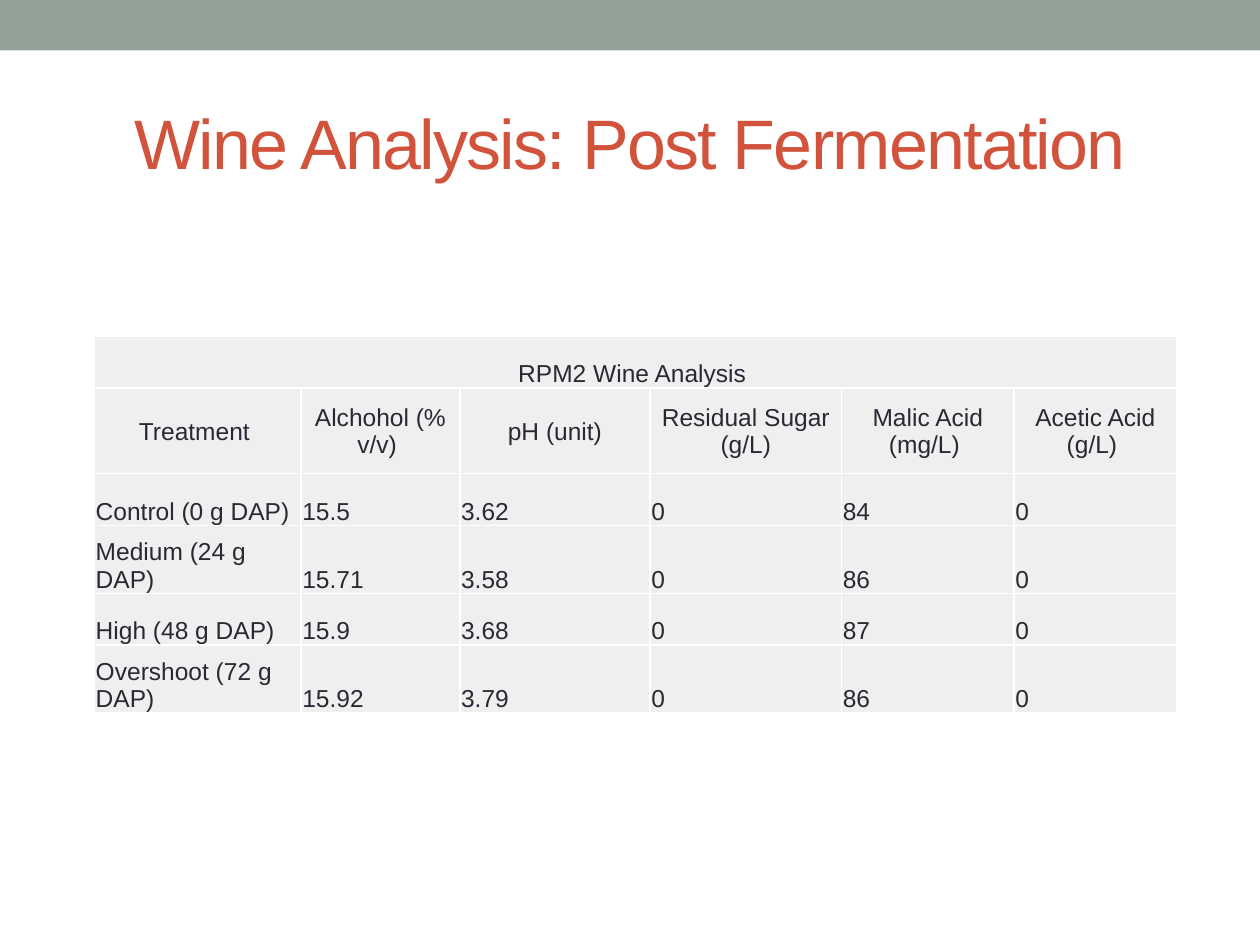
from lxml.etree import SubElement
from pptx import Presentation
from pptx.dml.color import RGBColor
from pptx.enum.shapes import MSO_SHAPE
from pptx.enum.text import MSO_ANCHOR, PP_ALIGN
from pptx.oxml.ns import qn
from pptx.util import Inches, Pt

SAGE = RGBColor(0x93, 0xA2, 0x99)
RUST = RGBColor(0xD2, 0x53, 0x3C)
INK = RGBColor(0x29, 0x29, 0x34)
PALE = RGBColor(0xEE, 0xF0, 0xEF)
WHITE = RGBColor(0xFF, 0xFF, 0xFF)

TITLE = "Wine Analysis: Post Fermentation"
CAPTION = "RPM2 Wine Analysis "
HEADERS = ["Treatment ", "Alchohol (% v/v) ", "pH (unit)",
           "Residual Sugar (g/L)", "Malic Acid (mg/L) ", "Acetic Acid (g/L) "]
RESULTS = [
    ["Control (0 g DAP)", "15.5", "3.62", "0", "84", "0"],
    ["Medium (24 g DAP)", "15.71", "3.58", "0", "86", "0"],
    ["High (48 g DAP)", "15.9", "3.68", "0", "87", "0"],
    ["Overshoot (72 g DAP)", "15.92", "3.79", "0", "86", "0"],
]
COL_WIDTHS = [1.64, 1.26, 1.51, 1.52, 1.37, 1.29]
ROW_HEIGHTS = [0.41, 0.68, 0.41, 0.54, 0.41, 0.54]


def write(tf, text, size=14, color=INK, align=PP_ALIGN.LEFT, spacing=None):
    p = tf.paragraphs[0]
    p.alignment = align
    r = p.add_run()
    r.text = text
    r.font.name = "Arial"
    r.font.size = Pt(size)
    r.font.color.rgb = color
    if spacing is not None:
        r.font._element.set("spc", str(int(spacing * 100)))


def add_borders(cell, color=WHITE, width=1):
    tc_pr = cell._tc.get_or_add_tcPr()
    for side in ("a:lnL", "a:lnR", "a:lnT", "a:lnB"):
        ln = SubElement(tc_pr, qn(side), w=str(Pt(width)))
        fill = SubElement(ln, qn("a:solidFill"))
        SubElement(fill, qn("a:srgbClr"), val=str(color))


def format_cell(cell, anchor):
    add_borders(cell)
    cell.fill.solid()
    cell.fill.fore_color.rgb = PALE
    cell.vertical_anchor = anchor
    cell.margin_left = cell.margin_right = cell.margin_top = Inches(0.01)
    cell.margin_bottom = 0


def add_analysis_table(s):
    rows = [[CAPTION] + [""] * (len(HEADERS) - 1), HEADERS] + RESULTS
    frame = s.shapes.add_table(
        len(rows), len(HEADERS), Inches(0.75), Inches(2.67),
        Inches(sum(COL_WIDTHS)), Inches(sum(ROW_HEIGHTS)))
    table = frame.table
    table.first_row = table.horz_banding = False
    for col, width in zip(table.columns, COL_WIDTHS):
        col.width = Inches(width)
    for row, height in zip(table.rows, ROW_HEIGHTS):
        row.height = Inches(height)
    table.cell(0, 0).merge(table.cell(0, len(HEADERS) - 1))
    for i, texts in enumerate(rows):
        align = PP_ALIGN.CENTER if i < 2 else PP_ALIGN.LEFT
        anchor = MSO_ANCHOR.MIDDLE if i == 1 else MSO_ANCHOR.BOTTOM
        for j, text in enumerate(texts):
            cell = table.cell(i, j)
            format_cell(cell, anchor)
            if text:
                write(cell.text_frame, text, align=align)


def main():
    prs = Presentation()
    prs.slide_width, prs.slide_height = Inches(10), Inches(7.5)
    s = prs.slides.add_slide(prs.slide_layouts[5])

    band = s.shapes.add_shape(MSO_SHAPE.RECTANGLE, 0, 0, prs.slide_width, Inches(0.4))
    band.shadow.inherit = False
    band.fill.solid()
    band.fill.fore_color.rgb = SAGE
    band.line.fill.background()

    title = s.shapes.title
    title.left, title.top = Inches(0.5), Inches(0.58)
    title.width, title.height = Inches(9), Inches(1.08)
    title.text_frame.vertical_anchor = MSO_ANCHOR.MIDDLE
    write(title.text_frame, TITLE, size=40, color=RUST,
          align=PP_ALIGN.CENTER, spacing=-1)

    add_analysis_table(s)
    prs.save("out.pptx")


if __name__ == "__main__":
    main()
